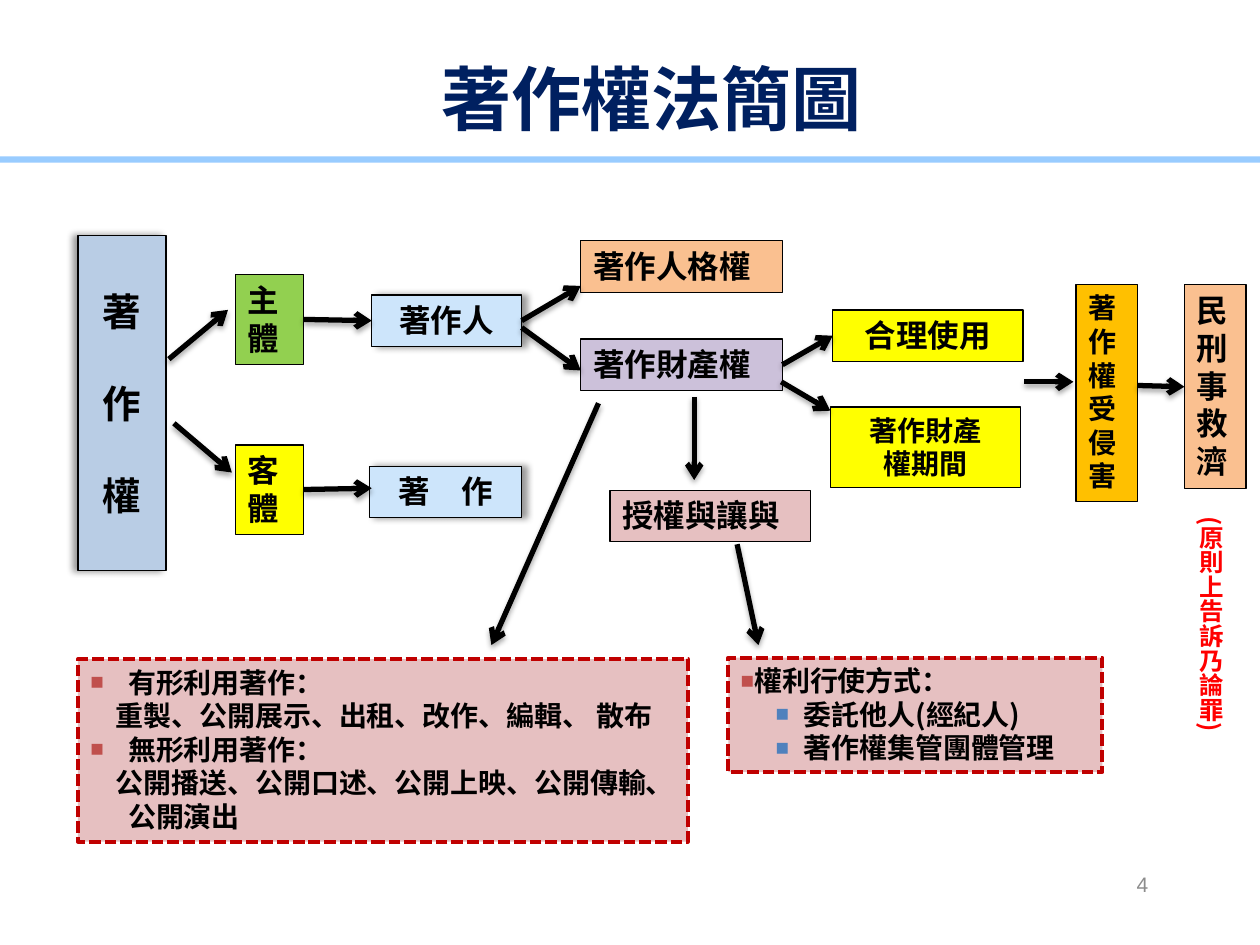
from dataclasses import dataclass
from typing import Optional

import pptx
import pptx.dml.color
import pptx.enum.dml
import pptx.enum.shapes
import pptx.enum.text
import pptx.oxml
import pptx.oxml.ns
import pptx.util

Pt = pptx.util.Pt
Align = pptx.enum.text.PP_ALIGN
Anchor = pptx.enum.text.MSO_ANCHOR
qn = pptx.oxml.ns.qn
NS = pptx.oxml.ns.nsdecls("a")
FONT = "Noto Sans CJK SC"
HUES = {
    "black": "000000", "navy": "002060", "sky": "99CCFF", "steel": "B9CDE5",
    "green": "92D050", "yellow": "FFFF00", "pale": "CDE5FB", "pink": "E6C0C1",
    "peach": "FAC090", "purple": "CCC1DA", "gold": "FFC000", "dark": "C00000",
    "brick": "C0504D", "blue": "4F81BD", "red": "FF0000", "gray": "8C8C8C",
}
BOTTOM, LEFT, RIGHT = 2, 1, 3


@dataclass
class Para:
    text: str
    margin: float = 0
    indent: float = 0
    bullet: Optional[str] = None


@dataclass
class Style:
    size: float = 18
    hue: str = "black"
    bold: bool = True
    font: str = FONT
    align: Align = Align.LEFT
    anchor: Anchor = Anchor.TOP
    gap: float = 0


@dataclass
class Box:
    key: str
    x: float
    y: float
    w: float
    h: float
    fill: str
    paras: list[Para]
    style: Style
    shade: Optional[int] = None
    dashed: bool = False


@dataclass
class Arrow:
    start: tuple[float, float]
    end: tuple[float, float]
    source: Optional[str] = None
    target: Optional[str] = None


MID = Style(align=Align.CENTER)
SIDE = Style()
SMALL = Style(size=16)
TALL = Style(size=22, align=Align.CENTER, anchor=Anchor.MIDDLE, gap=26)

BOXES = [
    Box("right", 44.6, 134.6, 50.4, 191.5, "steel", [Para(c) for c in "著作權"], TALL, 180),
    Box("subject", 134.6, 157, 38.9, 51.1, "green", [Para("主體")], SIDE),
    Box("object", 134.6, 254.2, 38.9, 51.1, "yellow", [Para("客體")], SIDE),
    Box("author", 212.4, 168.5, 85.7, 29.5, "pale", [Para("著作人")], MID, 0),
    Box("uses", 44.6, 376.6, 348.5, 104.4, "pink", [
        Para("有形利用著作：", 21.6, -21.6, "brick"),
        Para("重製、公開展示、出租、改作、編輯、 散布", 21.6, -7),
        Para("無形利用著作：", 21.6, -21.6, "brick"),
        Para("公開播送、公開口述、公開上映、公開傳輸、公開演出", 21.6, -7),
    ], SMALL, dashed=True),
    Box("moral", 331.9, 137.5, 115.2, 29.5, "peach", [Para("著作人格權")], SIDE),
    Box("wealth", 331.9, 193.7, 115.2, 29.5, "purple", [Para("著作財產權")], SIDE),
    Box("license", 348.5, 280.1, 114.5, 29.5, "pink", [Para("授權與讓與")], SIDE),
    Box("fair", 475.9, 177.1, 108.7, 29.5, "yellow", [Para("合理使用")], MID),
    Box("breach", 614.9, 162.7, 35.3, 123.8, "gold", [Para("著作權受侵害")], SMALL),
    Box("ways", 416.2, 375.8, 213.8, 65.5, "pink", [
        Para("權利行使方式：", bullet="brick"),
        Para("委託他人(經紀人)", 36, -16, "blue"),
        Para("著作權集管團體管理", 36, -16, "blue"),
    ], SMALL, dashed=True),
    Box("relief", 676.8, 162.7, 35.3, 116.6, "peach", [Para("民刑事救濟")], SIDE),
    Box("work", 211, 266.4, 87.1, 29.5, "pale", [Para("著　作")], MID, 0),
    Box("term", 474.5, 232.6, 108.7, 46.1, "yellow", [Para("著作財產"), Para("權期間")],
        Style(size=16, align=Align.CENTER)),
]

ARROWS = [
    Arrow((99.4, 241.9), (132.5, 270)),
    Arrow((96.5, 205.2), (130.3, 177.1)),
    Arrow((173.5, 279.4), (212.4, 279), "object"),
    Arrow((298.1, 183.6), (331.9, 163.4), "author"),
    Arrow((298.1, 187.2), (331.9, 211.7)),
    Arrow((396.7, 226.8), (396.7, 274.3)),
    Arrow((447.1, 208.1), (475.2, 191.5), "wealth", "fair"),
    Arrow((650.2, 220.3), (676.8, 220.3), None, "relief"),
    Arrow((585.4, 218.2), (613.4, 218.2)),
    Arrow((342, 230.4), (280.8, 368.6)),
    Arrow((421.2, 311), (433.4, 368.6)),
    Arrow((173.5, 182.2), (212.4, 183.6), "subject", "author"),
    Arrow((446.4, 218.2), (474.5, 234.7)),
]


def color(name: str) -> pptx.dml.color.RGBColor:
    return pptx.dml.color.RGBColor.from_string(HUES[name])


def add_shade(props, alpha: int, blur: float, dist: float, angle: int) -> None:
    """Give the shape properties one outer shadow, or replace the present one."""
    for old in props.findall(qn("a:effectLst")):
        props.remove(old)
    props.append(pptx.oxml.parse_xml(
        f'<a:effectLst {NS}><a:outerShdw blurRad="{Pt(blur)}" dist="{Pt(dist)}" '
        f'dir="{angle * 60000}" algn="ctr" rotWithShape="0"><a:srgbClr val="{HUES["black"]}">'
        f'<a:alpha val="{alpha * 1000}"/></a:srgbClr></a:outerShdw></a:effectLst>'))


def set_bullet(props, hue: str) -> None:
    for part in (f'<a:buClr {NS}><a:srgbClr val="{HUES[hue]}"/></a:buClr>',
                 f'<a:buSzPct {NS} val="80000"/>',
                 f'<a:buFont {NS} typeface="Arial"/>',
                 f'<a:buChar {NS} char="■"/>'):
        props.append(pptx.oxml.parse_xml(part))


def write(frame, paras: list[Para], style: Style) -> None:
    frame.word_wrap = True
    frame.vertical_anchor = style.anchor
    for n, para in enumerate(paras):
        line = frame.add_paragraph() if n else frame.paragraphs[0]
        line.alignment = style.align
        line.line_spacing = Pt(style.size * 1.2)
        line.space_before = Pt(style.gap if n else 0)
        props = line._p.get_or_add_pPr()
        props.set("marL", str(Pt(para.margin)))
        props.set("indent", str(Pt(para.indent)))
        if para.bullet:
            set_bullet(props, para.bullet)
        run = line.add_run()
        run.text = para.text
        run.font.size = Pt(style.size)
        run.font.bold = style.bold
        run.font.color.rgb = color(style.hue)
        run.font.name = style.font
        run._r.get_or_add_rPr().append(
            pptx.oxml.parse_xml(f'<a:ea {NS} typeface="{style.font}"/>'))


def add_rect(slide, x: float, y: float, w: float, h: float, fill: str):
    shape = slide.shapes.add_shape(
        pptx.enum.shapes.MSO_SHAPE.RECTANGLE, Pt(x), Pt(y), Pt(w), Pt(h))
    shape.shadow.inherit = False
    shape.fill.solid()
    shape.fill.fore_color.rgb = color(fill)
    shape.line.fill.background()
    return shape


def add_box(slide, box: Box):
    shape = add_rect(slide, box.x, box.y, box.w, box.h, box.fill)
    shape.line.color.rgb = color("dark" if box.dashed else "black")
    shape.line.width = Pt(2.25 if box.dashed else 0.75)
    if box.dashed:
        shape.line.dash_style = pptx.enum.dml.MSO_LINE.SQUARE_DOT
        shape.line._ln.find(qn("a:prstDash")).set("val", "sysDash")
    if box.shade is not None:
        add_shade(shape._element.spPr, 40, 4, 3, box.shade)
    write(shape.text_frame, box.paras, box.style)
    return shape


def add_arrow(slide, arrow: Arrow, shapes: dict) -> None:
    line = slide.shapes.add_connector(
        pptx.enum.shapes.MSO_CONNECTOR.STRAIGHT, *map(Pt, arrow.start + arrow.end))
    if arrow.source:
        line.begin_connect(shapes[arrow.source], RIGHT)
    if arrow.target:
        line.end_connect(shapes[arrow.target], LEFT)
    line.line.color.rgb = color("black")
    line.line.width = Pt(3)
    props = line._element.spPr
    props.find(qn("a:ln")).append(pptx.oxml.parse_xml(f'<a:tailEnd {NS} type="arrow"/>'))
    add_shade(props, 35, 3.1, 1.8, 90)


def add_label(slide, x: float, y: float, w: float, h: float, text: str, style: Style):
    label = slide.shapes.add_textbox(Pt(x), Pt(y), Pt(w), Pt(h))
    write(label.text_frame, [Para(text)], style)
    return label


def main() -> None:
    deck = pptx.Presentation()
    deck.slide_width, deck.slide_height = Pt(720), Pt(540)
    slide = deck.slides.add_slide(deck.slide_layouts[6])
    add_rect(slide, 0, 89.3, 720, 3.6, "sky")
    add_label(slide, 48.2, 20.9, 648, 69.1, "著作權法簡圖",
              Style(40, "navy", align=Align.CENTER, anchor=Anchor.MIDDLE))
    shapes = {box.key: add_box(slide, box) for box in BOXES}
    for arrow in ARROWS:
        add_arrow(slide, arrow, shapes)
    note = add_label(slide, 672.5, 288, 31.7, 140.4, "(原則上告訴乃論罪)",
                     Style(14, "red", align=Align.CENTER))
    note.text_frame._txBody.bodyPr.set("vert", "eaVert")
    add_label(slide, 495.4, 491, 167.8, 28.8, "4",
              Style(12, "gray", False, "Arial", Align.RIGHT, Anchor.MIDDLE))
    deck.save("out.pptx")


if __name__ == "__main__":
    main()
